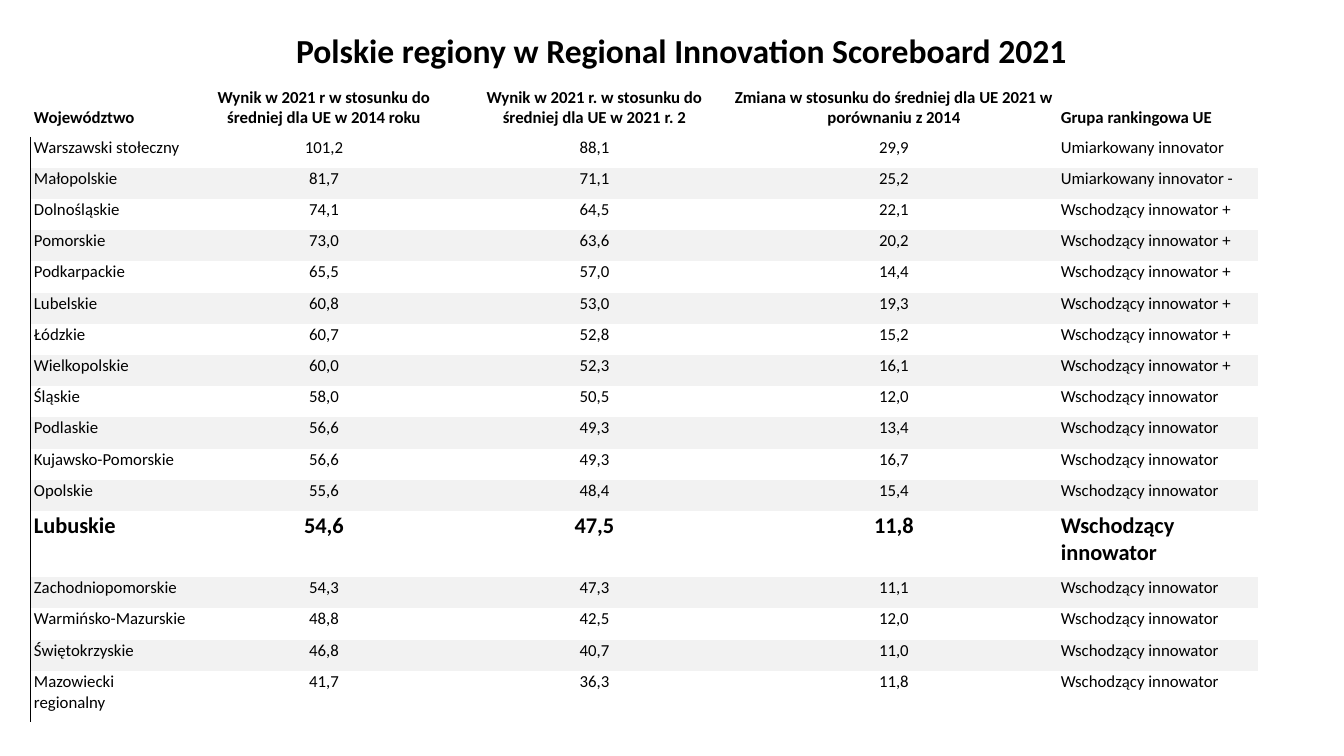
from dataclasses import dataclass

from lxml.etree import SubElement
from pptx import Presentation
from pptx.dml.color import RGBColor
from pptx.enum.text import MSO_ANCHOR as Anchor, MSO_AUTO_SIZE as AutoSize, PP_ALIGN as Align
from pptx.oxml.ns import qn
from pptx.util import Emu, Pt

EMU_PER_PX = 914400 / 100.8
PLAIN_TABLE_STYLE = "{2D5ABB26-0587-4C30-8999-92F81FD0307C}"


def px(length):
    return Emu(round(length * EMU_PER_PX))


@dataclass(frozen=True)
class Theme:
    font: str = "Calibri"
    ink: str = "000000"
    band: str = "F2F2F2"
    title_size: int = 24
    body_size: int = 12
    highlight_size: int = 16
    rule_width: float = 0.75


TITLE = "Polskie regiony w Regional Innovation Scoreboard 2021"
HEADINGS = (
    "Województwo",
    "Wynik w 2021 r w stosunku do średniej dla UE w 2014 roku",
    "Wynik w 2021 r. w stosunku do średniej dla UE w 2021 r. 2",
    "Zmiana w stosunku do średniej dla UE 2021 w porównaniu z 2014",
    "Grupa rankingowa UE",
)
MODERATE = "Umiarkowany innovator"
EMERGING = "Wschodzący innowator"
REGIONS = (
    ("Warszawski stołeczny", "101,2", "88,1", "29,9", MODERATE),
    ("Małopolskie", "81,7", "71,1", "25,2", MODERATE + " -"),
    ("Dolnośląskie", "74,1", "64,5", "22,1", EMERGING + " +"),
    ("Pomorskie", "73,0", "63,6", "20,2", EMERGING + " +"),
    ("Podkarpackie", "65,5", "57,0", "14,4", EMERGING + " +"),
    ("Lubelskie", "60,8", "53,0", "19,3", EMERGING + " +"),
    ("Łódzkie", "60,7", "52,8", "15,2", EMERGING + " +"),
    ("Wielkopolskie", "60,0", "52,3", "16,1", EMERGING + " +"),
    ("Śląskie", "58,0", "50,5", "12,0", EMERGING),
    ("Podlaskie", "56,6", "49,3", "13,4", EMERGING),
    ("Kujawsko-Pomorskie", "56,6", "49,3", "16,7", EMERGING),
    ("Opolskie", "55,6", "48,4", "15,4", EMERGING),
    ("Lubuskie", "54,6", "47,5", "11,8", EMERGING),
    ("Zachodniopomorskie", "54,3", "47,3", "11,1", EMERGING),
    ("Warmińsko-Mazurskie", "48,8", "42,5", "12,0", EMERGING),
    ("Świętokrzyskie", "46,8", "40,7", "11,0", EMERGING),
    ("Mazowiecki regionalny", "41,7", "36,3", "11,8", EMERGING),
)
HIGHLIGHTED = "Lubuskie"
COLUMN_WIDTHS = (159, 269, 272, 327, 201)
HEADER_HEIGHT = 51
TALL_ROWS = {"Lubuskie": 66, "Mazowiecki regionalny": 51}


def region_height(index, name):
    """Ordinary rows share 156 px per five rows."""
    return TALL_ROWS.get(name, (index + 1) * 156 // 5 - index * 156 // 5)


class SlideBuilder:
    def __init__(self, slide, theme):
        self.slide = slide
        self.theme = theme

    def style(self, paragraph, size, bold, align):
        paragraph.alignment = align
        font = paragraph.font
        font.name = self.theme.font
        font.size = Pt(size)
        font.bold = bold
        font.color.rgb = RGBColor.from_string(self.theme.ink)

    def title(self, text, left, top, width, height):
        heading = self.slide.shapes.title
        heading.left, heading.top = px(left), px(top)
        heading.width, heading.height = px(width), px(height)
        frame = heading.text_frame
        frame.text = text
        frame.word_wrap = True
        frame.auto_size = AutoSize.NONE
        frame.vertical_anchor = Anchor.BOTTOM
        frame.paragraphs[0].line_spacing = 0.9
        self.style(frame.paragraphs[0], self.theme.title_size, True, Align.LEFT)

    def table(self, left, top, rows, widths, heights):
        holder = self.slide.shapes.add_table(
            len(rows), len(widths), px(left), px(top), px(sum(widths)), px(sum(heights)))
        next(holder.element.iter(qn("a:tableStyleId"))).text = PLAIN_TABLE_STYLE
        grid = holder.table
        grid.horz_banding = False
        for column, width in zip(grid.columns, widths):
            column.width = px(width)
        for row_index, (row, height) in enumerate(zip(rows, heights)):
            grid.rows[row_index].height = px(height)
            for column_index, text in enumerate(row):
                cell = grid.cell(row_index, column_index)
                highlighted = row[0] == HIGHLIGHTED
                size = self.theme.highlight_size if highlighted else self.theme.body_size
                centred = 0 < column_index < len(row) - 1
                self.cell(cell, text, size, row_index == 0 or highlighted,
                          Align.CENTER if centred else Align.LEFT)
                cell.vertical_anchor = Anchor.TOP if row_index else Anchor.BOTTOM
                if row_index and row_index % 2 == 0:
                    cell.fill.solid()
                    cell.fill.fore_color.rgb = RGBColor.from_string(self.theme.band)
                else:
                    cell.fill.background()
                if row_index and column_index == 0:
                    self.left_rule(cell)

    def cell(self, cell, text, size, bold, align):
        cell.text = text
        cell.margin_left, cell.margin_top = px(4), px(1)
        cell.margin_right, cell.margin_bottom = px(3), px(9)
        self.style(cell.text_frame.paragraphs[0], size, bold, align)

    def left_rule(self, cell):
        properties = cell._tc.get_or_add_tcPr()
        rule = SubElement(properties, qn("a:lnL"), w=str(Pt(self.theme.rule_width)))
        SubElement(SubElement(rule, qn("a:solidFill")), qn("a:srgbClr"), val=self.theme.ink)
        properties.insert(0, rule)


def main():
    deck = Presentation()
    deck.slide_width, deck.slide_height = px(1344), px(756)
    builder = SlideBuilder(deck.slides.add_slide(deck.slide_layouts[5]), Theme())
    builder.title(TITLE, 286, 4, 1023, 72)
    heights = [HEADER_HEIGHT]
    heights += [region_height(index, region[0]) for index, region in enumerate(REGIONS)]
    builder.table(30, 86, (HEADINGS, *REGIONS), COLUMN_WIDTHS, heights)
    deck.save("out.pptx")


if __name__ == "__main__":
    main()
